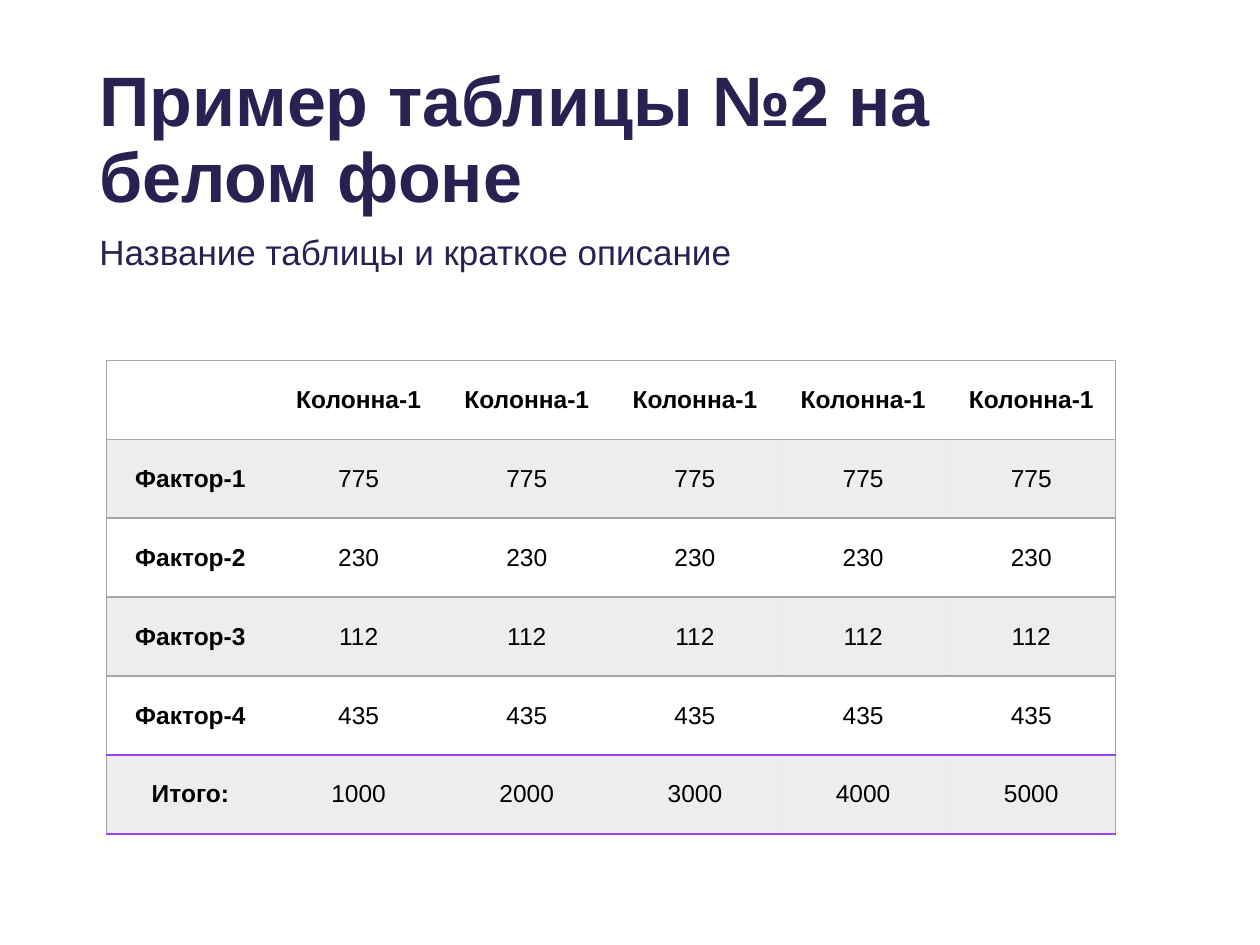
from lxml import etree
from pptx import Presentation
from pptx.dml.color import RGBColor
from pptx.enum.text import MSO_ANCHOR, PP_ALIGN
from pptx.oxml.ns import qn
from pptx.util import Pt

MIDDLE, TOP = MSO_ANCHOR.MIDDLE, MSO_ANCHOR.TOP
CENTER, LEFT = PP_ALIGN.CENTER, PP_ALIGN.LEFT

# Content
TITLE = "Пример таблицы №2 на \vбелом фоне"
SUBTITLE = "Название таблицы и краткое описание"
ROWS = [
    ("", ["Колонна-1"] * 5),
    ("Фактор-1", ["775"] * 5),
    ("Фактор-2", ["230"] * 5),
    ("Фактор-3", ["112"] * 5),
    ("Фактор-4", ["435"] * 5),
    ("Итого:", ["1000", "2000", "3000", "4000", "5000"]),
]
NAVY, BLACK, GRAY, BAND, PURPLE = "282252", "000000", "A6A6A6", "A5A5A5", "9744F6"
TABLE_LEFT, TABLE_TOP, COLUMN_WIDTH, ROW_HEIGHT = 60.8, 205.9, 96.1, 45.1


def color(value):
    return RGBColor.from_string(value)


def style(paragraph, size, value, bold, align):
    paragraph.alignment = align
    font = paragraph.font
    font.name, font.size, font.bold = "Arial", Pt(size), bold
    font.color.rgb = color(value)


def add_text(page, text, place, size, bold, anchor, spacing):
    box = page.shapes.add_textbox(*(Pt(length) for length in place))
    frame = box.text_frame
    frame.word_wrap, frame.vertical_anchor = True, anchor
    frame.text = text
    para = frame.paragraphs[0]
    para.line_spacing = spacing
    style(para, size, NAVY, bold, LEFT)


def fill_band(cell):
    cell.fill.solid()
    cell.fill.fore_color.rgb = color(BAND)
    tint = cell.fill._xPr.find(".//" + qn("a:srgbClr"))
    etree.SubElement(tint, qn("a:alpha"), val="20000")


def set_borders(cell, borders):
    """Draw the given sides and switch the other sides off."""
    properties = cell._tc.get_or_add_tcPr()
    for index, side in enumerate(("lnL", "lnR", "lnT", "lnB")):
        line = etree.Element(qn("a:" + side), w=str(Pt(1)))
        if side in borders:
            paint = etree.SubElement(line, qn("a:solidFill"))
            etree.SubElement(paint, qn("a:srgbClr"), val=borders[side])
        else:
            etree.SubElement(line, qn("a:noFill"))
        properties.insert(index, line)


def add_factor_table(page):
    row_count, column_count = len(ROWS), len(ROWS[0][1]) + 1
    frame = page.shapes.add_table(
        row_count, column_count, Pt(TABLE_LEFT), Pt(TABLE_TOP),
        Pt(COLUMN_WIDTH * column_count), Pt(ROW_HEIGHT * row_count))
    table = frame.table
    for column in table.columns:
        column.width = Pt(COLUMN_WIDTH)
    for row in table.rows:
        row.height = Pt(ROW_HEIGHT)

    last_row, last_column = row_count - 1, column_count - 1
    for r, (label, values) in enumerate(ROWS):
        for c, text in enumerate([label, *values]):
            cell = table.cell(r, c)
            cell.text, cell.vertical_anchor = text, MIDDLE
            style(cell.text_frame.paragraphs[0], 14, BLACK, r == 0 or c == 0, CENTER)
            # Every second row is tinted
            if r % 2:
                fill_band(cell)
            else:
                cell.fill.background()
            # Purple rules enclose the total row
            borders = {"lnT": PURPLE if r == last_row else GRAY,
                       "lnB": PURPLE if r >= last_row - 1 else GRAY}
            if c == 0:
                borders["lnL"] = GRAY
            if c == last_column:
                borders["lnR"] = GRAY
            set_borders(cell, borders)


deck = Presentation()
deck.slide_width, deck.slide_height = Pt(720), Pt(540)
page = deck.slides.add_slide(deck.slide_layouts[6])
add_text(page, TITLE, (49.7, 28.8, 620.6, 104.4), 40, True, MIDDLE, 0.9)
add_factor_table(page)
add_text(page, SUBTITLE, (49.7, 128.2, 590.4, 31.7), 20, False, TOP, 1)
deck.save("out.pptx")
